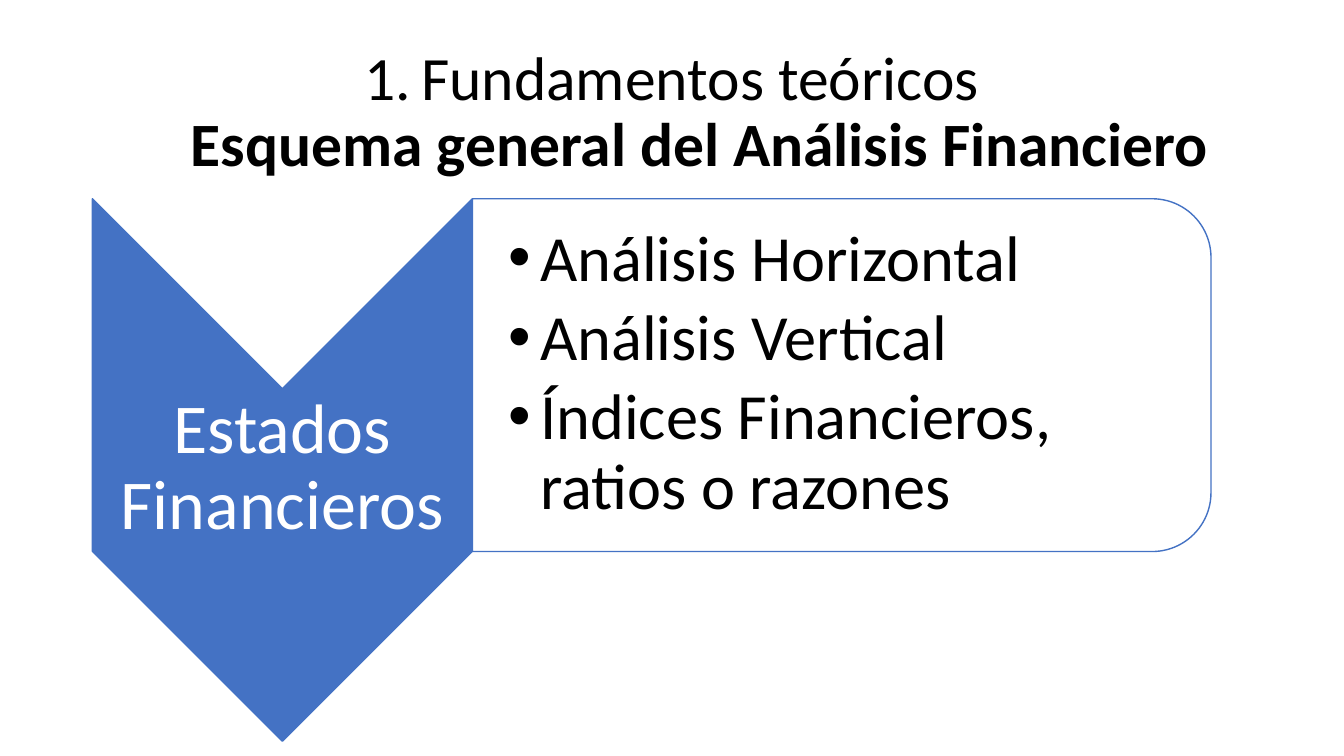
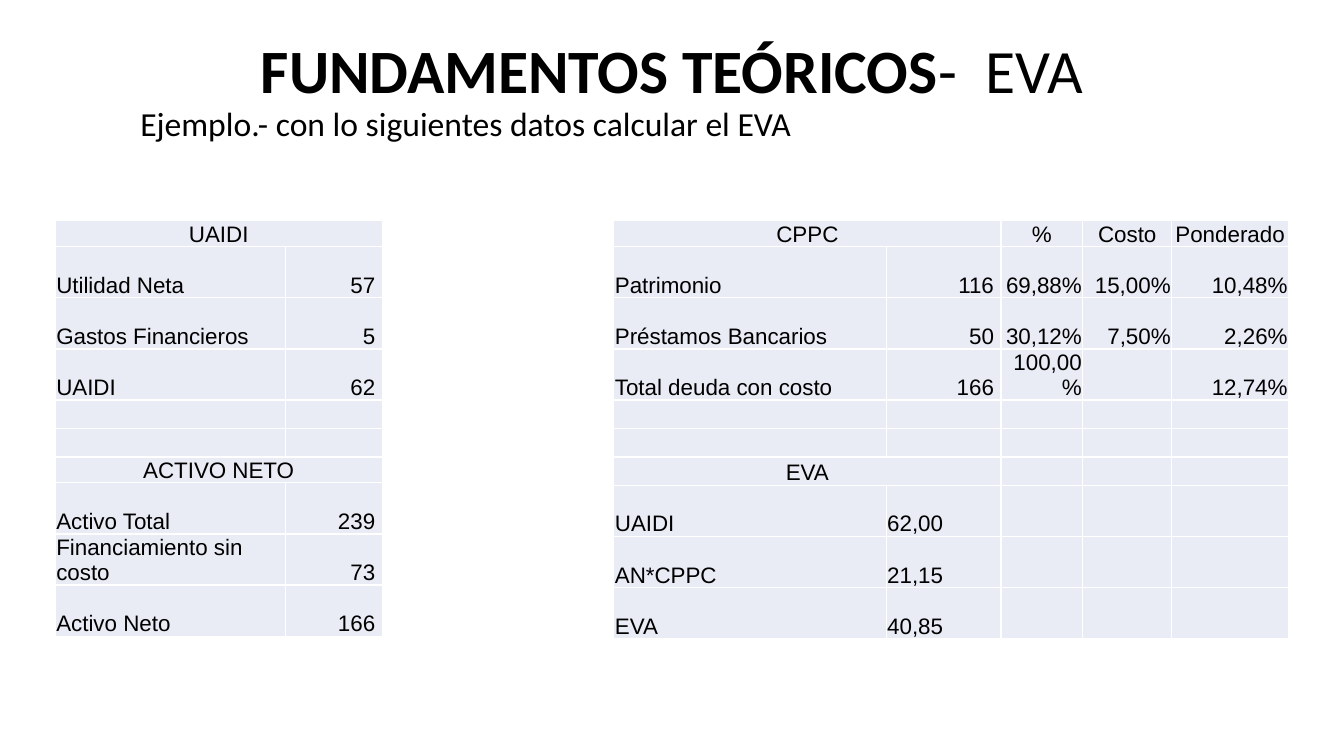
"""Build two slides on the basics of financial analysis."""
from lxml import etree
from pptx import Presentation
from pptx import util as u
from pptx.dml.color import RGBColor
from pptx.enum import shapes, text
from pptx.oxml import ns

BLACK = RGBColor(0x00, 0x00, 0x00)
WHITE = RGBColor(0xFF, 0xFF, 0xFF)
BLUE = RGBColor(0x44, 0x72, 0xC4)
PALE = RGBColor(0xE9, 0xEB, 0xF5)

LEFT, MID, RIGHT = text.PP_ALIGN.LEFT, text.PP_ALIGN.CENTER, text.PP_ALIGN.RIGHT
TITLE = {"size": u.Pt(44), "name": "Calibri", "bold": False}
LIST = {"size": u.Pt(46), "name": "Calibri"}
LABEL = {"size": u.Pt(50), "name": "Calibri"}
LEAD = {"size": u.Pt(24), "name": "Calibri"}
CELL = {"size": u.Pt(16), "name": "Arial"}
TIGHT = {"line_spacing": 0.9, "space_before": u.Pt(0)}

PROFIT = [
    ["UAIDI", None],
    ["Utilidad Neta", "57"],
    ["Gastos Financieros", "5"],
    ["UAIDI", "62"],
    ["", ""],
    ["", ""],
    ["ACTIVO NETO", None],
    ["Activo Total", "239"],
    ["Financiamiento sin costo", "73"],
    ["Activo Neto", "166"],
]
VALUE = [
    ["CPPC", None, "%", "Costo", "Ponderado"],
    ["Patrimonio", "116", "69,88%", "15,00%", "10,48%"],
    ["Préstamos Bancarios", "50", "30,12%", "7,50%", "2,26%"],
    ["Total deuda con costo", "166", "100,00%", "", "12,74%"],
    [""] * 5,
    [""] * 5,
    ["EVA", None, "", "", ""],
    ["UAIDI", "62,00", "", "", ""],
    ["AN*CPPC", "21,15", "", "", ""],
    ["EVA", "40,85", "", "", ""],
]


def style(thing, **form):
    """Set each named attribute on a thing."""
    for name, value in form.items():
        setattr(thing, name, value)


def points(*sizes):
    """Turn numbers into lengths in points."""
    return [u.Pt(size) for size in sizes]


def place(shape, box):
    """Move and size a shape."""
    style(shape, **dict(zip(("left", "top", "width", "height"), points(*box))))


def write(para, words, form, color=BLACK):
    """Add a run with its font format."""
    run = para.add_run()
    run.text = words
    style(run.font, **form)
    run.font.color.rgb = color


def bullet(para, tag, hang=0, edge=0, **marks):
    """Give a paragraph its bullet and indent."""
    props = para._p.get_or_add_pPr()
    props.set("marL", str(u.Pt(edge or hang)))
    props.set("indent", str(-u.Pt(hang)))
    etree.SubElement(props, ns.qn(tag), **marks)


def frame(shape, box, anchor, **form):
    """Place a text shape and set up its frame."""
    place(shape, box)
    style(shape.text_frame, word_wrap=True, auto_size=text.MSO_AUTO_SIZE.NONE,
          vertical_anchor=anchor, **form)
    return shape.text_frame


def title(slide, top):
    """Format the title and return its paragraph."""
    para = frame(slide.shapes.title, (66, top, 828, 104.5),
                 text.MSO_ANCHOR.MIDDLE).paragraphs[0]
    style(para, alignment=MID, **TIGHT)
    return para


def turned(slide, kind, box, fill):
    """Add a shape turned a quarter so that it fills the box."""
    left, top, wide, high = box
    shift = (wide - high) / 2
    shape = slide.shapes.add_shape(
        kind, *points(left + shift, top - shift, high, wide))
    shape.rotation = 90
    shape.shadow.inherit = False
    shape.fill.solid()
    shape.fill.fore_color.rgb = fill
    shape.line.color.rgb = BLUE
    shape.line.width = u.Pt(1)


def border(cell):
    """Draw thin white lines round a cell."""
    props = cell._tc.get_or_add_tcPr()
    for side in ("a:lnL", "a:lnR", "a:lnT", "a:lnB"):
        line = etree.SubElement(props, ns.qn(side), w=str(u.Pt(1)))
        fill = etree.SubElement(line, ns.qn("a:solidFill"))
        etree.SubElement(fill, ns.qn("a:srgbClr"), val=str(WHITE))


def align(words, col, head):
    """Choose the side on which a cell's words sit."""
    if head:
        return MID
    plain = "," in words and "%" not in words
    return LEFT if col == 0 or plain else RIGHT


def fill_cell(cell, words, side, gap):
    """Write and format one cell."""
    border(cell)
    cell.fill.solid()
    cell.fill.fore_color.rgb = PALE
    style(cell, vertical_anchor=text.MSO_ANCHOR.BOTTOM, margin_left=u.Pt(0.75),
          margin_right=u.Pt(gap), margin_top=u.Pt(0.75), margin_bottom=0)
    para = cell.text_frame.paragraphs[0]
    para.alignment = side
    if words:
        write(para, words, CELL)
    else:
        etree.SubElement(para._p, ns.qn("a:endParaRPr"), sz="1600")


def grid(slide, left, widths, rows, second):
    """Add a table with two headed blocks."""
    highs = [18] + [36.5] * 3 + [20] * 2 + [second] + [36.5] * 3
    box = points(left, 157.75, sum(widths), sum(highs))
    table = slide.shapes.add_table(len(rows), len(widths), *box).table
    style(table, first_row=False, horz_banding=False)
    for col, wide in zip(table.columns, widths):
        col.width = u.Pt(wide)
    for at, (row, high) in enumerate(zip(rows, highs)):
        table.rows[at].height = u.Pt(high)
        head = row[1] is None
        for col, words in enumerate(row):
            fill_cell(table.cell(at, col), words or "",
                      align(words or "", col, head), 5 if col == 1 else 0.75)
        if head:
            table.cell(at, 0).merge(table.cell(at, 1))


def scheme(slide):
    """Build the general scheme slide."""
    para = title(slide, 28.75)
    bullet(para, "a:buAutoNum", 40.5, type="arabicPeriod")
    write(para, "Fundamentos teóricos", TITLE)
    para.add_line_break()
    write(para, "Esquema general del Análisis Financiero", {**TITLE, "bold": True})

    kinds = shapes.MSO_SHAPE
    turned(slide, kinds.CHEVRON, (66, 142, 271.5, 387.5), BLUE)
    turned(slide, kinds.ROUND_2_SAME_RECTANGLE, (337.5, 142, 527.5, 252), WHITE)
    inset = dict.fromkeys(
        ("margin_left", "margin_right", "margin_top", "margin_bottom"), u.Pt(2))
    label = slide.shapes.add_textbox(0, 0, 0, 0)
    para = frame(label, (66, 277, 271.5, 116), text.MSO_ANCHOR.MIDDLE,
                 **inset).paragraphs[0]
    style(para, alignment=MID, **TIGHT)
    write(para, "Estados Financieros", LABEL, WHITE)

    body = slide.placeholders[1]
    body.element.getparent().append(body.element)
    area = frame(body, (337.5, 154, 515.5, 227), text.MSO_ANCHOR.MIDDLE,
                 **{**inset, "margin_left": u.Pt(26)})
    items = ("Análisis Horizontal", "Análisis Vertical",
             "Índices Financieros, ratios o razones")
    for at, words in enumerate(items):
        para = area.add_paragraph() if at else area.paragraphs[0]
        bullet(para, "a:buChar", 22.5, char="•")
        style(para, space_after=u.Pt(7), **TIGHT)
        write(para, words, LIST)


def sample(slide):
    """Build the worked example slide."""
    para = title(slide, 0)
    write(para, "FUNDAMENTOS TEÓRICOS", {**TITLE, "bold": True})
    write(para, "-  EVA", TITLE)
    para = frame(slide.placeholders[1], (57, 73.5, 828, 60),
                 text.MSO_ANCHOR.TOP).paragraphs[0]
    para.level = 1
    bullet(para, "a:buNone", edge=36)
    style(para, **TIGHT)
    write(para, "Ejemplo.- con lo siguientes datos calcular el EVA", LEAD)
    grid(slide, 39.5, (164.5, 69), PROFIT, 18.5)
    grid(slide, 438.5, (194.5, 82, 58.5, 63.5, 83.5), VALUE, 20.5)


def main():
    """Build and save the slides."""
    deck = Presentation()
    style(deck, slide_width=u.Pt(960), slide_height=u.Pt(540))
    for build in (scheme, sample):
        build(deck.slides.add_slide(deck.slide_layouts[1]))
    deck.save("out.pptx")


if __name__ == "__main__":
    main()
